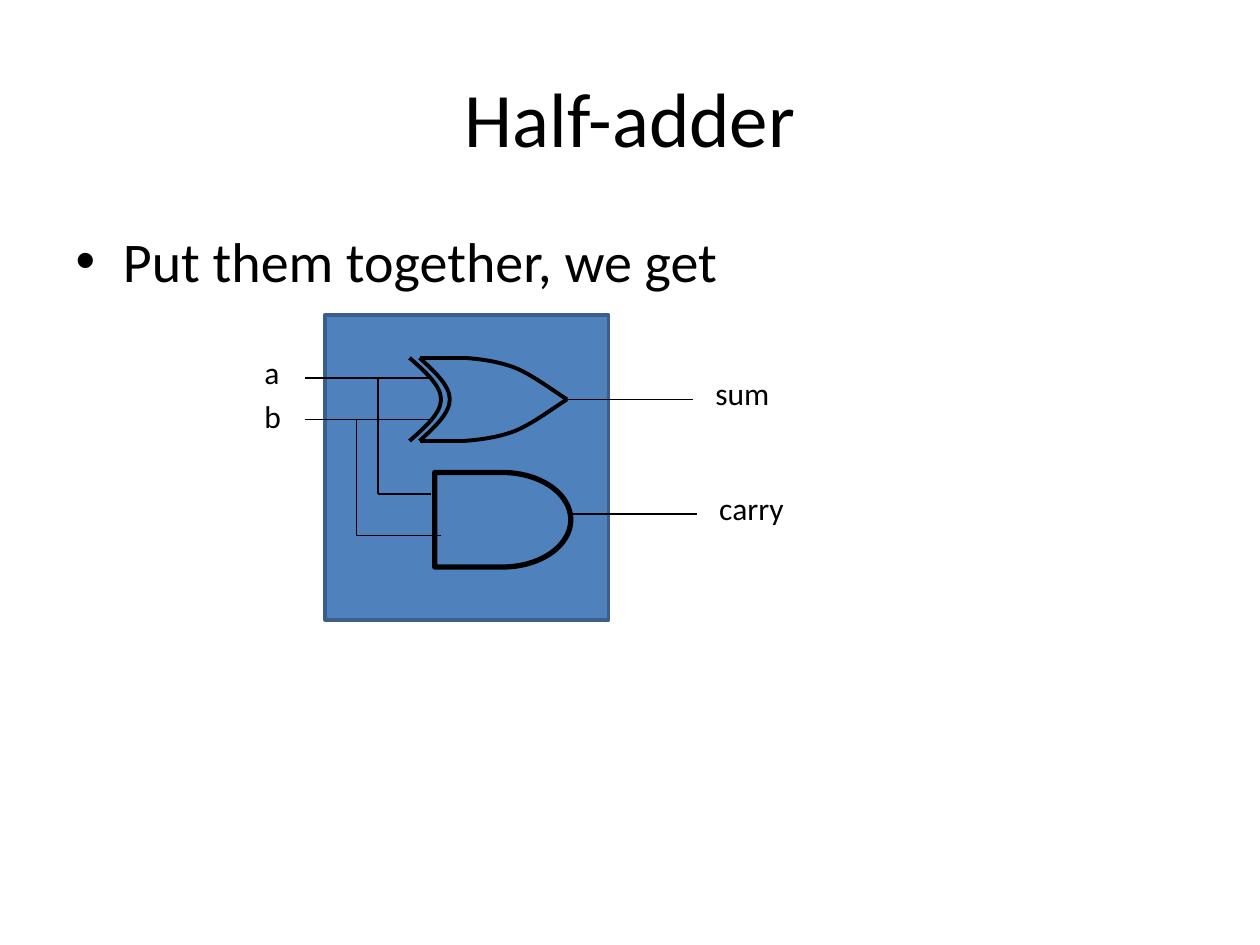
from dataclasses import dataclass

from pptx import Presentation
from pptx.dml.color import RGBColor
from pptx.enum import shapes, text
from pptx.oxml import ns
from pptx.util import Inches, Pt
from lxml import etree


@dataclass(frozen=True)
class Theme:
    font: str = "Calibri"
    ink: RGBColor = RGBColor(0x00, 0x00, 0x00)
    block_fill: RGBColor = RGBColor(0x4F, 0x81, 0xBD)
    block_line: RGBColor = RGBColor(0x3A, 0x5F, 0x8C)
    title_size: float = 44
    body_size: float = 32
    label_size: float = 18
    wire: float = 0.75
    xor_line: float = 2.25
    and_line: float = 3
    block_width: float = 2


THEME = Theme()


def place(shape, left, top, width, height):
    shape.left, shape.top = Inches(left), Inches(top)
    shape.width, shape.height = Inches(width), Inches(height)


def write(frame, words, size, align):
    frame.text = words
    para = frame.paragraphs[0]
    para.alignment = align
    for span in para.runs:
        span.font.name = THEME.font
        span.font.size = Pt(size)
        span.font.color.rgb = THEME.ink


def outline(shape, width, color=THEME.ink):
    shape.line.color.rgb = color
    shape.line.width = Pt(width)


def add_line(parent, start, end, width=THEME.wire):
    line = parent.add_connector(
        shapes.MSO_CONNECTOR.STRAIGHT, *map(Inches, (*start, *end)))
    outline(line, width)
    etree.SubElement(line._element.spPr, ns.qn("a:effectLst"))


def add_curve(parent, start, *points):
    """Draw an open cubic outline; each three points are two controls and an end."""
    builder = parent.build_freeform(*map(Inches, start))
    builder.add_line_segments(
        [tuple(map(Inches, point)) for point in points], close=False)
    curve = builder.convert_to_shape()
    steps = list(curve._element.iter(ns.qn("a:lnTo")))
    for first in range(0, len(steps), 3):
        cubic = etree.Element(ns.qn("a:cubicBezTo"))
        steps[first].addprevious(cubic)
        for step in steps[first:first + 3]:
            cubic.append(step[0])
            step.getparent().remove(step)
    curve.shadow.inherit = False
    curve.fill.background()
    outline(curve, THEME.xor_line)


def add_arc(parent, left, middle, half, bulge):
    """Draw the concave input side of the XOR gate."""
    right = left + bulge
    add_curve(
        parent, (left, middle + half),
        (left + bulge / 2, middle + half * 2 / 3),
        (right, middle + half / 3), (right, middle),
        (right, middle - half / 3),
        (left + bulge / 2, middle - half * 2 / 3), (left, middle - half))


def add_xor_gate(page, middle=3.17, half=0.33):
    gate = page.shapes.add_group_shape().shapes
    for side in (1, -1):
        edge = middle + side * half
        add_line(gate, (3.33, edge), (3.68, edge), THEME.xor_line)
        add_curve(
            gate, (3.68, edge),
            *((x, middle + side * rise) for x, rise in (
                (3.82, 0.32), (3.96, 0.3), (4.09, 0.25),
                (4.23, 0.19), (4.36, 0.09), (4.5, 0))))
    add_arc(gate, 3.33, middle, half, 0.24)
    add_arc(page.shapes, 3.25, middle, half, 0.25)


def add_and_gate(page):
    gate = page.shapes.add_shape(
        shapes.MSO_SHAPE.FLOWCHART_DELAY,
        *map(Inches, (3.45, 3.75, 1.08, 0.75)))
    gate.shadow.inherit = False
    gate.fill.background()
    outline(gate, THEME.and_line)


def add_block(page):
    block = page.shapes.add_shape(
        shapes.MSO_SHAPE.RECTANGLE, *map(Inches, (2.58, 2.5, 2.25, 2.42)))
    block.shadow.inherit = False
    block.fill.solid()
    block.fill.fore_color.rgb = THEME.block_fill
    outline(block, THEME.block_width, THEME.block_line)
    page.shapes._spTree.insert(2, block._element)  # behind the placeholders


def add_label(page, words, left, top, width):
    box = page.shapes.add_textbox(*map(Inches, (left, top, width, 0.4)))
    box.text_frame.word_wrap = False
    box.text_frame.auto_size = text.MSO_AUTO_SIZE.SHAPE_TO_FIT_TEXT
    write(box.text_frame, words, THEME.label_size, text.PP_ALIGN.LEFT)


def add_wires(page):
    for y in (3, 3.33):
        add_line(page.shapes, (2.42, y), (3.42, y))
    for x, y in ((4.5, 3.17), (4.53, 4.08)):
        add_line(page.shapes, (x, y), (x + 1, y))
    # Each input branches down to the AND gate.
    for x, top, bottom, end in ((3, 3, 3.92, 3.42), (2.83, 3.33, 4.25, 3.5)):
        add_line(page.shapes, (x, top), (x, bottom))
        add_line(page.shapes, (x, bottom), (end, bottom))


def main():
    deck = Presentation()
    deck.slide_width, deck.slide_height = Inches(10), Inches(7.5)
    page = deck.slides.add_slide(deck.slide_layouts[1])

    title, body = page.shapes.title, page.placeholders[1]
    place(title, 0.5, 0.3, 9, 1.25)
    write(title.text_frame, "Half-adder", THEME.title_size, text.PP_ALIGN.CENTER)
    place(body, 0.5, 1.75, 9, 0.92)
    write(body.text_frame, "Put them together, we get",
          THEME.body_size, text.PP_ALIGN.LEFT)

    add_block(page)
    add_xor_gate(page)
    add_and_gate(page)
    add_wires(page)
    for label in (("a", 2, 2.75, 0.32), ("b", 2, 3.1, 0.34),
                  ("sum", 5.58, 2.92, 0.64), ("carry", 5.61, 3.83, 0.72)):
        add_label(page, *label)
    deck.save("out.pptx")


if __name__ == "__main__":
    main()
